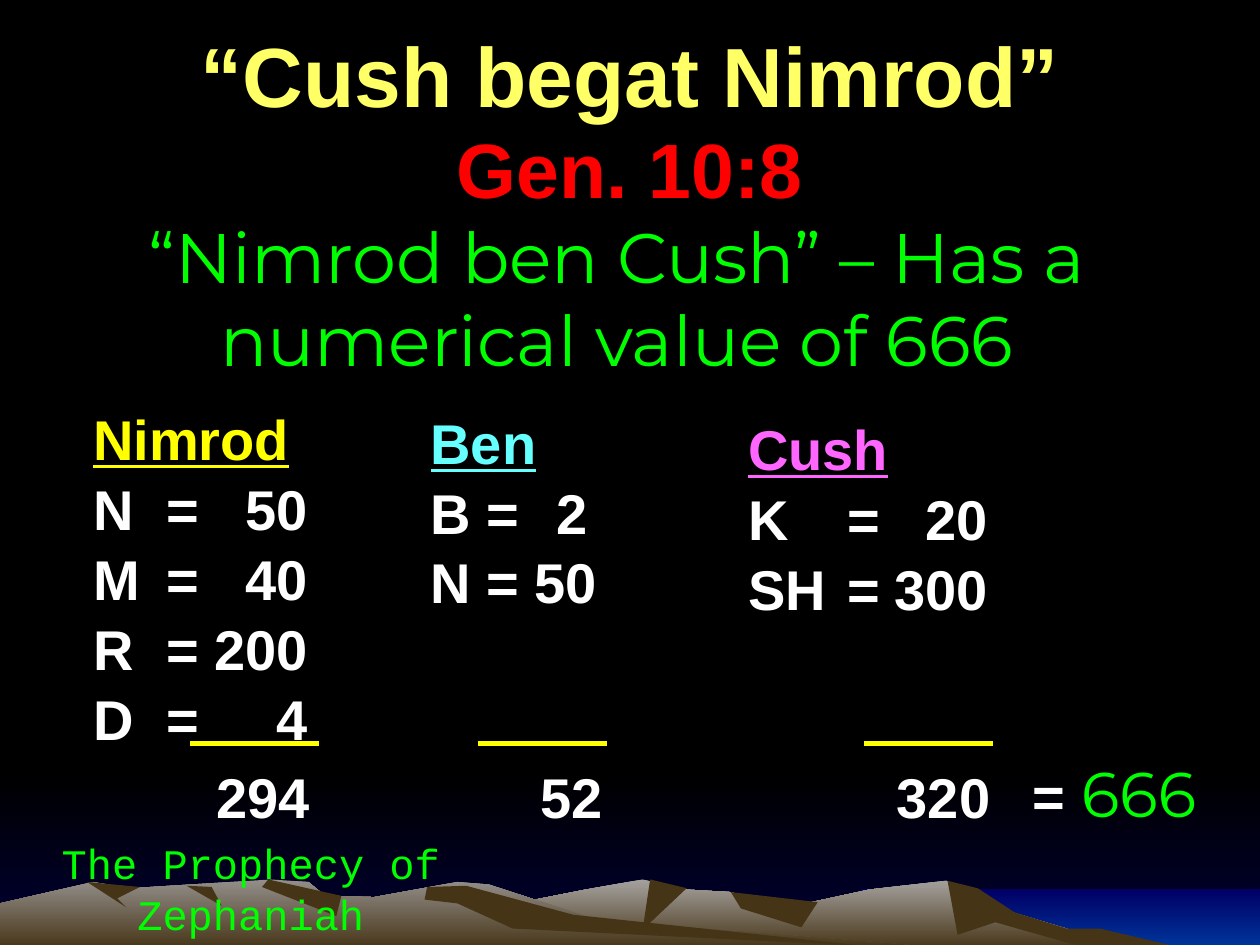
from dataclasses import dataclass

import pptx
import pptx.dml.color
import pptx.enum.shapes
import pptx.enum.text
import pptx.oxml
import pptx.oxml.ns
import pptx.util
from pptx.util import Cm

ALIGN = pptx.enum.text.PP_ALIGN
ANCHOR = pptx.enum.text.MSO_ANCHOR


@dataclass(frozen=True)
class Theme:
    black: str = "000000"
    night: str = "000066"
    water: str = "003399"
    shade: str = "463416"
    back_ridge: str = "A5A29F"
    front_ridge: str = "938F8B"
    white: str = "FFFFFF"
    green: str = "00FF00"
    yellow: str = "FFFF00"
    title: str = "FFFF66"
    red: str = "FF0000"
    cyan: str = "66FFFF"
    pink: str = "FF66FF"
    sans: str = "Arial"
    display: str = "Montserrat"
    mono: str = "Courier New"
    title_pt: int = 48
    verse_pt: int = 44
    claim_pt: int = 40
    sum_pt: int = 36
    body_pt: int = 32
    footer_pt: int = 24


T = Theme()


@dataclass(frozen=True)
class Run:
    text: str
    size: int = T.body_pt
    color: str = T.white
    font: str = T.sans
    bold: bool = True
    underline: bool = False


@dataclass(frozen=True)
class Box:
    left: float
    top: float
    width: float
    height: float


@dataclass(frozen=True)
class Land:
    """An outline in hundredths of an inch."""
    color: str
    points: list[tuple[int, int]]


@dataclass(frozen=True)
class NameSum:
    name: str
    color: str
    box: Box
    letters: list[str]
    tabs: list[tuple[float, str]]
    total: str
    total_left: float
    rule_left: float


def rgb(color: str) -> pptx.dml.color.RGBColor:
    return pptx.dml.color.RGBColor.from_string(color)


def paint(sp, *colors: str) -> None:
    """Fill with one colour, or with a gradient from top to bottom."""
    sp.shadow.inherit = False
    sp.line.fill.background()
    if len(colors) == 1:
        sp.fill.solid()
        sp.fill.fore_color.rgb = rgb(colors[0])
        return
    sp.fill.gradient()
    sp.fill.gradient_angle = 270
    for position, (stop, color) in enumerate(zip(sp.fill.gradient_stops, colors)):
        stop.color.rgb = rgb(color)
        stop.position = position


def add_band(s, box: Box, *colors: str) -> None:
    sp = s.shapes.add_shape(pptx.enum.shapes.MSO_SHAPE.RECTANGLE, Cm(box.left), Cm(box.top),
                            Cm(box.width), Cm(box.height))
    paint(sp, *colors)


def add_land(s, land: Land) -> None:
    builder = s.shapes.build_freeform(*land.points[0], scale=Cm(2.54) / 100)
    builder.add_line_segments(land.points[1:], close=True)
    colors = (land.color,) if land.color == T.shade else (land.color, T.shade)
    paint(builder.convert_to_shape(), *colors)


def add_text(s, box: Box, lines: list[list[Run]], align=ALIGN.LEFT, anchor=ANCHOR.TOP,
             wrap: bool = True, spacing: float = 1.0,
             tabs: list[tuple[float, str]] = ()) -> None:
    sp = s.shapes.add_textbox(Cm(box.left), Cm(box.top), Cm(box.width), Cm(box.height))
    tf = sp.text_frame
    tf.word_wrap = wrap
    tf.vertical_anchor = anchor
    for i, line in enumerate(lines):
        p = tf.paragraphs[0] if i == 0 else tf.add_paragraph()
        p.alignment = align
        p.line_spacing = spacing
        if tabs:
            tab_list = pptx.oxml.parse_xml(
                f"<a:tabLst {pptx.oxml.ns.nsdecls('a')}>"
                + "".join(f'<a:tab pos="{Cm(pos)}" algn="{side}"/>' for pos, side in tabs)
                + "</a:tabLst>")
            p._p.get_or_add_pPr().append(tab_list)
        for run in line:
            r = p.add_run()
            r.text = run.text
            r.font.name = run.font
            r.font.size = pptx.util.Pt(run.size)
            r.font.bold = run.bold
            r.font.underline = run.underline
            r.font.color.rgb = rgb(run.color)


def add_rule(s, left: float, top: float, width: float) -> None:
    line = s.shapes.add_connector(pptx.enum.shapes.MSO_CONNECTOR.STRAIGHT,
                                  Cm(left), Cm(top), Cm(left + width), Cm(top))
    line.line.color.rgb = rgb(T.yellow)
    line.line.width = pptx.util.Pt(3)
    line._element.spPr.append(
        pptx.oxml.parse_xml(f"<a:effectLst {pptx.oxml.ns.nsdecls('a')}/>"))


def add_name_sum(s, item: NameSum) -> None:
    heading = Run(item.name, color=item.color, underline=True)
    add_text(s, item.box, [[heading]] + [[Run(text)] for text in item.letters],
             spacing=1.04, tabs=item.tabs)
    add_text(s, Box(item.total_left, 15.19, 2.39, 1.6), [[Run(item.total)]],
             wrap=False, spacing=1.04)
    add_rule(s, item.rule_left, 14.99, 2.6)


LANDSCAPE = [
    # Back ridge and its shaded faces
    Land(T.back_ridge, [(283, 753), (389, 721), (465, 706), (510, 698), (545, 706), (580, 708),
                        (621, 721), (690, 706), (751, 699), (793, 721), (900, 753)]),
    Land(T.shade, [(752, 699), (760, 742), (790, 732), (864, 753), (941, 753), (873, 737),
                   (846, 737), (805, 724), (776, 705)]),
    Land(T.shade, [(516, 698), (510, 738), (545, 705)]),
    Land(T.shade, [(580, 708), (588, 721), (636, 736), (649, 716)]),
    # Front ridge and its shaded faces
    Land(T.front_ridge, [(0, 753), (0, 717), (74, 700), (103, 705), (215, 698), (245, 700),
                         (258, 711), (297, 712), (363, 700), (388, 702), (473, 730),
                         (757, 753)]),
    Land(T.shade, [(213, 698), (208, 704), (267, 727), (271, 711)]),
    Land(T.shade, [(339, 704), (337, 714), (363, 717), (407, 737), (690, 751), (455, 726),
                   (370, 703)]),
    Land(T.shade, [(148, 703), (176, 719), (168, 704)]),
    Land(T.shade, [(69, 700), (100, 720), (93, 713), (111, 704)]),
]

NAME_SUMS = [
    NameSum("Nimrod", T.yellow, Box(1.63, 7.98, 6.2, 7.04),
            ["N\t=\t50", "M\t=\t40", "R\t=\t200", "D\t=\t4"], [(1.47, "l"), (4.33, "r")],
            "294", 4.11, 3.84),
    NameSum("Ben", T.cyan, Box(8.43, 8.05, 4.6, 4.37),
            ["B =\t2", "N = 50"], [(2.54, "l")], "52", 10.64, 9.63),
    NameSum("Cush", T.pink, Box(14.83, 8.18, 6.4, 4.37),
            ["K\t=\t20", "SH\t=\t300"], [(2.01, "l"), (4.83, "r")], "320", 17.83, 17.42),
]


def main() -> None:
    prs = pptx.Presentation()
    prs.slide_width, prs.slide_height = Cm(25.4), Cm(19.05)
    s = prs.slides.add_slide(prs.slide_layouts[6])
    s.background.fill.solid()
    s.background.fill.fore_color.rgb = rgb(T.black)

    # Night sky, water and ridges
    add_band(s, Box(0, 15.6, 25.4, 6.32), T.black, T.night)
    add_band(s, Box(0, 0, 25.4, 15.6), T.black)
    add_band(s, Box(17.35, 17.93, 8.05, 1.12), T.night, T.water)
    for land in LANDSCAPE:
        add_land(s, land)

    # Footer, claim and title
    add_text(s, Box(0, 17.53, 10.11, 1.52),
             [[Run("The Prophecy of Zephaniah", T.footer_pt, T.green, T.mono, False)]],
             ALIGN.CENTER, ANCHOR.BOTTOM)
    add_text(s, Box(0.23, 4.17, 24.41, 3.81),
             [[Run("“Nimrod ben Cush” – Has a numerical value of 666",
                   T.claim_pt, T.green, T.display, False)]], ALIGN.CENTER)
    add_text(s, Box(0, 0.46, 25.4, 3.78),
             [[Run("“Cush begat Nimrod”", T.title_pt, T.title)],
              [Run("Gen. 10:8", T.verse_pt, T.red)]], ALIGN.CENTER, spacing=0.97)

    # Letter values, their totals and the grand total
    for item in NAME_SUMS:
        add_name_sum(s, item)
    add_text(s, Box(20.57, 15.09, 4.04, 1.78),
             [[Run("= "), Run("666", T.sum_pt, T.green, T.display, False)]], wrap=False)

    prs.save("out.pptx")


if __name__ == "__main__":
    main()
